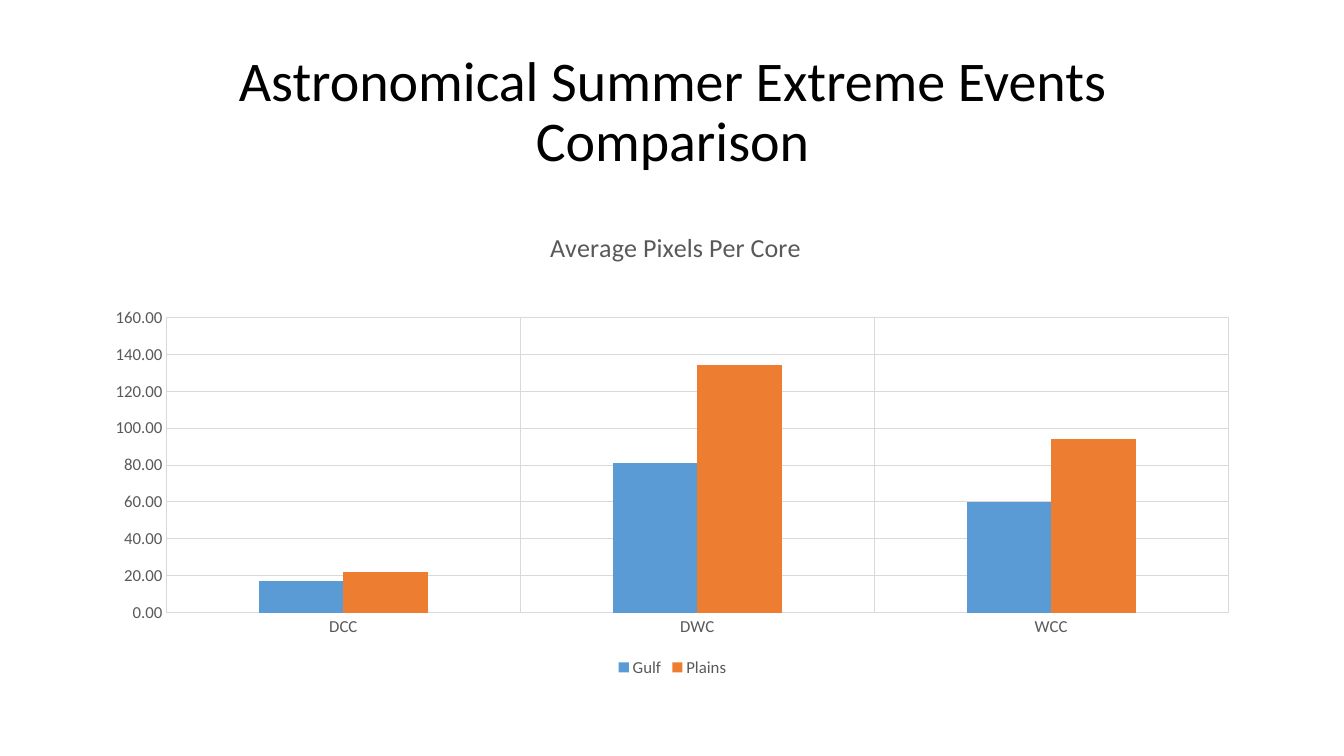
import dataclasses

import pptx
import pptx.chart.data
import pptx.dml.color
import pptx.enum.chart
import pptx.enum.text
import pptx.oxml
import pptx.oxml.ns
import pptx.util

EMU_PER_PX = 9144
SLIDE_SIZE = (1333, 750)
TITLE_BOX = (92, 40, 1150, 145)
CHART_BOX = (92, 200, 1150, 476)
PLOT_BOX = (165, 315, 1053, 293)
CHART_TITLE_CORNER = (541, 223)

CATEGORIES = ("DCC", "DWC", "WCC")
REGIONS = {"Gulf": (17, 81, 60), "Plains": (22, 134, 94)}


@dataclasses.dataclass(frozen=True)
class Theme:
    font: str = "Calibri"
    title_color: str = "000000"
    label_color: str = "595959"
    grid_color: str = "D9D9D9"
    series_colors: tuple = ("5B9BD5", "ED7D31")
    title_size: float = 40
    chart_title_size: float = 18.6
    label_size: float = 12
    line_width: float = 0.75


THEME = Theme()


def px(length):
    return pptx.util.Emu(length * EMU_PER_PX)


def rgb(color):
    return pptx.dml.color.RGBColor.from_string(color)


def style_font(font, size, color):
    font.name = THEME.font
    font.size = pptx.util.Pt(size)
    font.bold = False
    font.color.rgb = rgb(color)


def style_line(line):
    line.color.rgb = rgb(THEME.grid_color)
    line.width = pptx.util.Pt(THEME.line_width)


def set_title(slide, text):
    title = slide.shapes.title
    title.left, title.top, title.width, title.height = map(px, TITLE_BOX)
    frame = title.text_frame
    frame.text = text
    frame.word_wrap = True
    frame.auto_size = pptx.enum.text.MSO_AUTO_SIZE.NONE
    frame.vertical_anchor = pptx.enum.text.MSO_ANCHOR.MIDDLE
    paragraph = frame.paragraphs[0]
    paragraph.alignment = pptx.enum.text.PP_ALIGN.CENTER
    paragraph.line_spacing = 0.9
    style_font(paragraph.runs[0].font, THEME.title_size, THEME.title_color)


def place_in_chart(parent, box, inner=False):
    left, top, width, height = CHART_BOX
    fractions = {"x": (box[0] - left) / width, "y": (box[1] - top) / height}
    if len(box) == 4:
        fractions.update(w=box[2] / width, h=box[3] / height)
    target = '<c:layoutTarget val="inner"/>' if inner else ""
    modes = "".join(f'<c:{axis}Mode val="edge"/>' for axis in "xy")
    values = "".join(f'<c:{key} val="{value:.4f}"/>' for key, value in fractions.items())
    layout = pptx.oxml.parse_xml(
        f'<c:layout {pptx.oxml.ns.nsdecls("c")}><c:manualLayout>'
        f"{target}{modes}{values}</c:manualLayout></c:layout>"
    )
    name = pptx.oxml.ns.qn("c:layout")
    for existing in parent.findall(name):
        parent.remove(existing)
    text = parent.find(pptx.oxml.ns.qn("c:tx"))
    parent.insert(0 if text is None else parent.index(text) + 1, layout)


def style_axis(axis):
    axis.major_tick_mark = pptx.enum.chart.XL_TICK_MARK.NONE
    axis.minor_tick_mark = pptx.enum.chart.XL_TICK_MARK.NONE
    axis.has_major_gridlines = True
    style_line(axis.major_gridlines.format.line)
    style_font(axis.tick_labels.font, THEME.label_size, THEME.label_color)


def set_chart_title(chart, text):
    chart.has_title = True
    title = chart.chart_title
    title.include_in_layout = False
    title.text_frame.text = text
    run = title.text_frame.paragraphs[0].runs[0]
    style_font(run.font, THEME.chart_title_size, THEME.label_color)
    place_in_chart(title._element, CHART_TITLE_CORNER)


def set_legend(chart):
    chart.has_legend = True
    chart.legend.position = pptx.enum.chart.XL_LEGEND_POSITION.BOTTOM
    chart.legend.include_in_layout = False
    style_font(chart.legend.font, THEME.label_size, THEME.label_color)


def add_column_chart(slide, title):
    data = pptx.chart.data.CategoryChartData(number_format="0.00")
    data.categories = CATEGORIES
    for region, values in REGIONS.items():
        data.add_series(region, values)
    chart = slide.shapes.add_chart(
        pptx.enum.chart.XL_CHART_TYPE.COLUMN_CLUSTERED, *map(px, CHART_BOX), data
    ).chart
    style_font(chart.font, THEME.label_size, THEME.label_color)

    plot = chart.plots[0]
    plot.gap_width = 219
    plot.overlap = 0
    plot.vary_by_categories = False
    for series, color in zip(plot.series, THEME.series_colors):
        series.format.fill.solid()
        series.format.fill.fore_color.rgb = rgb(color)

    style_axis(chart.category_axis)
    style_line(chart.category_axis.format.line)
    values_axis = chart.value_axis
    style_axis(values_axis)
    values_axis.format.line.fill.background()
    values_axis.minimum_scale, values_axis.maximum_scale = 0, 160
    values_axis.major_unit = 20
    values_axis.tick_labels.number_format = "0.00"
    values_axis.tick_labels.number_format_is_linked = False

    set_chart_title(chart, title)
    set_legend(chart)
    plot_area = chart._chartSpace.chart.plotArea
    place_in_chart(plot_area, PLOT_BOX, inner=True)


def main():
    presentation = pptx.Presentation()
    presentation.slide_width, presentation.slide_height = map(px, SLIDE_SIZE)
    title_only = presentation.slide_layouts.get_by_name("Title Only")
    slide = presentation.slides.add_slide(title_only)
    set_title(slide, "Astronomical Summer Extreme Events Comparison")
    add_column_chart(slide, "Average Pixels Per Core")
    presentation.save("out.pptx")


if __name__ == "__main__":
    main()
